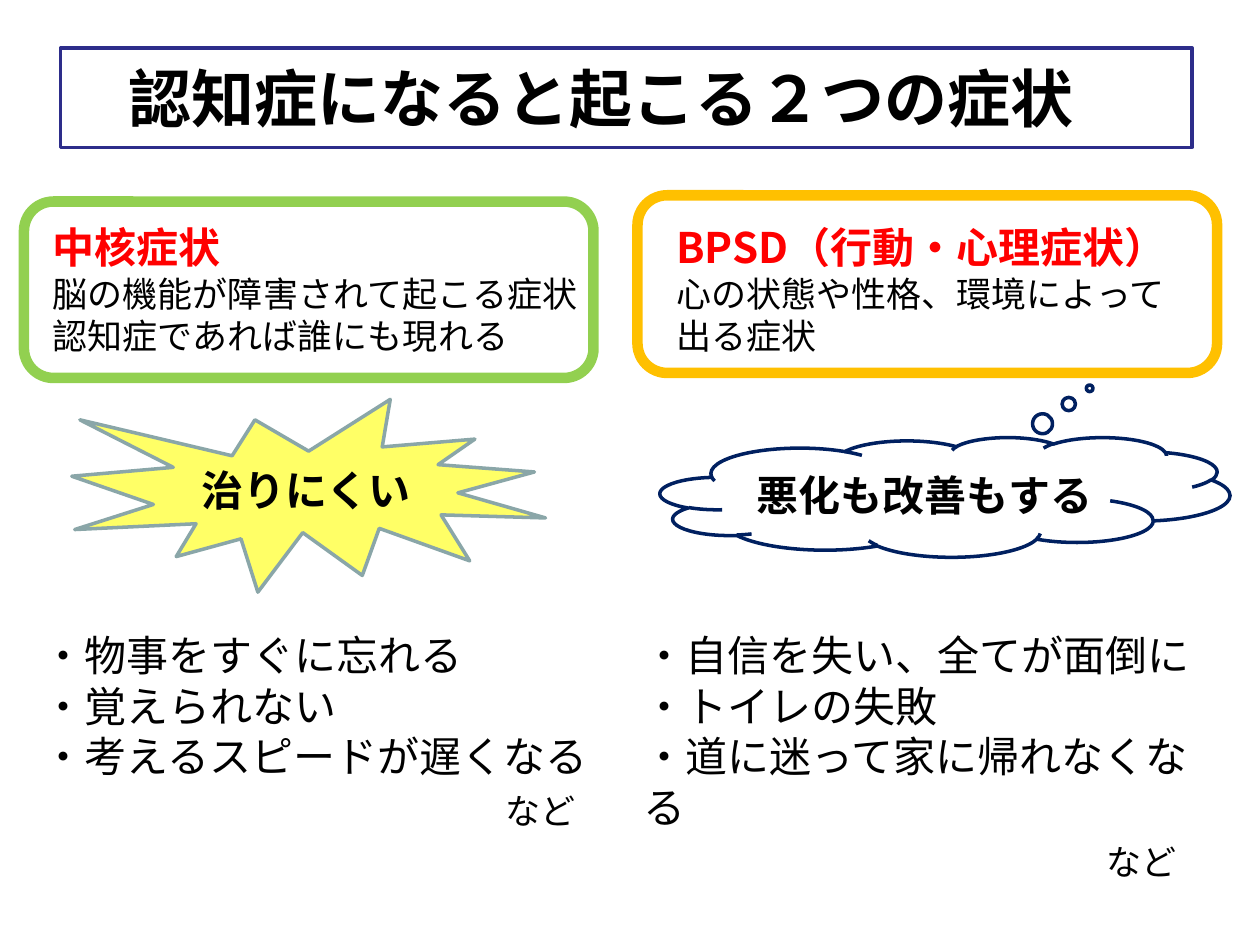
from dataclasses import dataclass

from lxml import etree
from pptx import Presentation
from pptx.dml.color import RGBColor
from pptx.enum.shapes import MSO_SHAPE
from pptx.enum.text import MSO_ANCHOR, PP_ALIGN
from pptx.oxml.ns import qn
from pptx.util import Inches, Pt

ROUND, BURST, CLOUD = (MSO_SHAPE.ROUNDED_RECTANGLE, MSO_SHAPE.EXPLOSION1,
                       MSO_SHAPE.CLOUD_CALLOUT)
LEFT, CENTER = PP_ALIGN.LEFT, PP_ALIGN.CENTER
MIDDLE = MSO_ANCHOR.MIDDLE


@dataclass(frozen=True)
class Theme:
    font: str = "Noto Sans CJK JP"
    black: RGBColor = RGBColor(0, 0, 0)
    white: RGBColor = RGBColor(0xFF, 0xFF, 0xFF)
    red: RGBColor = RGBColor(0xFF, 0, 0)
    yellow: RGBColor = RGBColor(0xFF, 0xFF, 0)
    green: RGBColor = RGBColor(0x92, 0xD0, 0x50)
    orange: RGBColor = RGBColor(0xFF, 0xC0, 0)
    navy: RGBColor = RGBColor(0, 0x20, 0x60)
    indigo: RGBColor = RGBColor(0x2D, 0x2D, 0x8A)
    gray: RGBColor = RGBColor(0x8A, 0xA6, 0xA8)
    title: int = 36
    body: int = 24
    small: int = 20


T = Theme()


def add_run(p, text, size, color=T.black, bold=False):
    r = p.add_run()
    r.text = text
    r.font.name = T.font
    r.font.size = Pt(size)
    r.font.bold = bold
    r.font.color.rgb = color
    etree.SubElement(r.font._element, qn("a:ea"), typeface=T.font)


def add_outlined(kind, box, color, width):
    sp = s.shapes.add_shape(kind, *map(Inches, box))
    sp.shadow.inherit = False
    sp.fill.background()
    sp.line.color.rgb = color
    sp.line.width = Pt(width)
    return sp


prs = Presentation()
prs.slide_width, prs.slide_height = Inches(10), Inches(7.5)
s = prs.slides.add_slide(prs.slide_layouts[5])

# Title in a framed box
title = s.shapes.title
title.left, title.top = Inches(0.48), Inches(0.38)
title.width, title.height = Inches(8.98), Inches(0.79)
title.fill.solid()
title.fill.fore_color.rgb = T.white
title.line.color.rgb = T.indigo
title.line.width = Pt(2)
tf = title.text_frame
tf.vertical_anchor = MIDDLE
tf.margin_left = Inches(0.54)
p = tf.paragraphs[0]
p.alignment = LEFT
add_run(p, "認知症になると起こる２つの症状", T.title, bold=True)

# One column for each kind of symptom
columns = [
    dict(frame=(0.19, 1.6, 4.52, 1.4), color=T.green,
         text_box=(0.32, 1.71, 4.52, 1.18), heading="中核症状",
         lines=["脳の機能が障害されて起こる症状", "認知症であれば誰にも現れる"],
         kind=BURST, callout=(0.57, 3.17, 3.76, 1.53), outline=T.gray,
         message="治りにくい", list_left=0.24,
         examples=["物事をすぐに忘れる", "覚えられない", "考えるスピードが遅くなる"]),
    dict(frame=(5.06, 1.55, 4.6, 1.41), color=T.orange,
         text_box=(5.27, 1.71, 4.3, 1.18), heading="BPSD（行動・心理症状）",
         lines=["心の状態や性格、環境によって", "出る症状"],
         kind=CLOUD, callout=(5.24, 3.47, 4.52, 0.95), outline=T.navy,
         message="悪化も改善もする", list_left=5.01,
         examples=["自信を失い、全てが面倒に", "トイレの失敗", "道に迷って家に帰れなくなる"]),
]

for col in columns:
    # Definition in a rounded frame
    add_outlined(ROUND, col["frame"], col["color"], 6)
    tf = s.shapes.add_textbox(*map(Inches, col["text_box"])).text_frame
    tf.word_wrap = True
    add_run(tf.paragraphs[0], col["heading"], T.body, T.red, True)
    for line in col["lines"]:
        add_run(tf.add_paragraph(), line, T.small)

    # Callout with the outlook
    sp = add_outlined(col["kind"], col["callout"], col["outline"], 2)
    if col["kind"] == BURST:
        sp.fill.solid()
        sp.fill.fore_color.rgb = T.yellow
        clr = sp.fill._xPr.find(qn("a:solidFill"))[0]
        etree.SubElement(clr, qn("a:alpha"), val="60000")
    else:
        sp.adjustments[0], sp.adjustments[1] = 0.254, -0.909
    tf = sp.text_frame
    tf.vertical_anchor = MIDDLE
    p = tf.paragraphs[0]
    p.alignment = CENTER
    add_run(p, col["message"], T.body, bold=True)

    # Examples, closed by an indented "and so on"
    tf = s.shapes.add_textbox(Inches(col["list_left"]), Inches(4.95),
                              Inches(4.73), Inches(1.72)).text_frame
    tf.word_wrap = True
    for i, example in enumerate(col["examples"]):
        p = tf.add_paragraph() if i else tf.paragraphs[0]
        add_run(p, "・" + example, T.body)
    p = tf.add_paragraph()
    p.space_before = Pt(5)
    p._p.get_or_add_pPr().set("marL", str(Inches(3.67)))
    add_run(p, "など", T.small)

prs.save("out.pptx")
